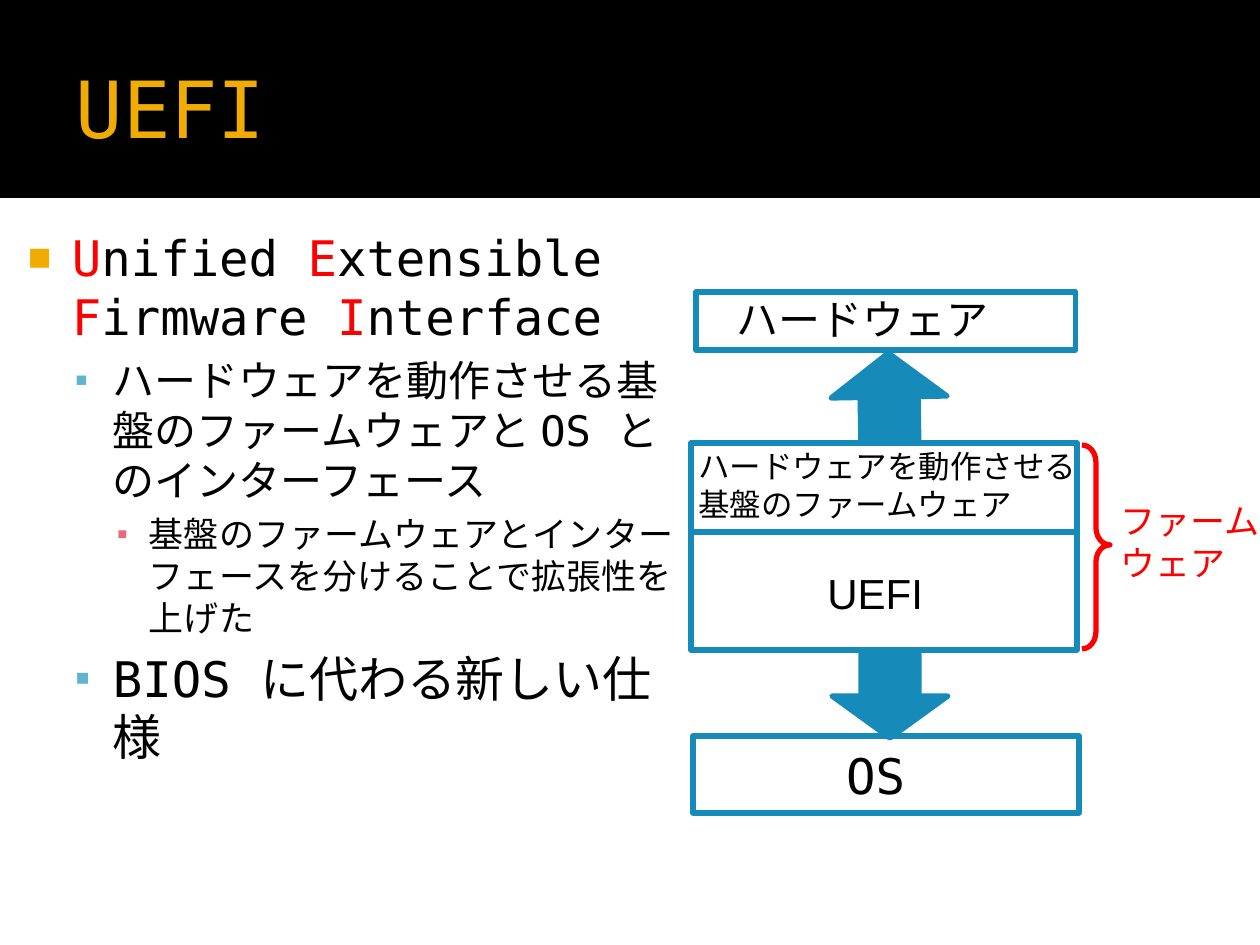
from lxml.etree import SubElement
from pptx import Presentation
from pptx.dml.color import RGBColor
from pptx.enum.shapes import MSO_CONNECTOR as Line, MSO_SHAPE as Kind
from pptx.enum.text import MSO_ANCHOR as Anchor, PP_ALIGN as Align
from pptx.oxml.ns import qn
from pptx.util import Emu, Pt

BLACK = RGBColor(0x00, 0x00, 0x00)
WHITE = RGBColor(0xFF, 0xFF, 0xFF)
RED = RGBColor(0xFF, 0x00, 0x00)
GOLD = RGBColor(0xF0, 0xAC, 0x00)
SKY = RGBColor(0x60, 0xB5, 0xCC)
PINK = RGBColor(0xE6, 0x6C, 0x7D)
BLUE = RGBColor(0x16, 0x8B, 0xBA)
MONO, SANS = "DejaVu Sans Mono", "Arial"
SCALE = 914400 / 126

LEVELS = {
    0: (60, 44, "■", GOLD, 80),
    1: (101, 38, "▪", SKY, 90),
    2: (137, 32, "▪", PINK, 90),
}
POINTS = [
    (0, 28, ["U", "nified ", "E", "xtensible ", "F", "irmware ", "I", "nterface"]),
    (1, 24, ["ハードウェアを動作させる基盤のファームウェアと OS とのインターフェース"]),
    (2, 20, ["基盤のファームウェアとインターフェースを分けることで拡張性を上げた"]),
    (1, 28, ["BIOS に代わる新しい仕様"]),
]


def px(num):
    """Turn pixels into EMU."""
    return Emu(round(num * SCALE))


def style(para, size, color, face):
    """Set the font of a paragraph."""
    font = para.font
    font.size, font.name = Pt(size), face
    font.color.rgb = color


def shape(slide, kind, box, line=None, fill=None):
    """Add a flat preset shape."""
    item = slide.shapes.add_shape(kind, *map(px, box))
    item.shadow.inherit = False
    if fill is None:
        item.fill.background()
    else:
        item.fill.solid()
        item.fill.fore_color.rgb = fill
    if line is None:
        item.line.fill.background()
    else:
        item.line.color.rgb = line
        item.line.width = Pt(3)
    return item


def label(slide, box, rows, size, color=BLACK):
    """Add an unwrapped text box with one paragraph per row."""
    frame = slide.shapes.add_textbox(*map(px, box)).text_frame
    frame.word_wrap = False
    frame.text = "\n".join(rows)
    for para in frame.paragraphs:
        style(para, size, color, SANS)


def bullet(para, level):
    """Give a paragraph the indent and bullet of its level."""
    left, hang, char, color, size = LEVELS[level]
    props = para._p.get_or_add_pPr()
    props.set("marL", str(px(left)))
    props.set("indent", str(px(-hang)))
    SubElement(SubElement(props, qn("a:buClr")), qn("a:srgbClr")).set("val", str(color))
    SubElement(props, qn("a:buSzPct")).set("val", str(size * 1000))
    SubElement(props, qn("a:buFont")).set("typeface", SANS)
    SubElement(props, qn("a:buChar")).set("char", char)


def header(slide, box):
    """Place the black band and the title on it."""
    x, y, w, h = box
    band = shape(slide, Kind.RECTANGLE, box, fill=BLACK)
    title = slide.shapes.title
    title._element.addprevious(band._element)
    title.left, title.top = px(x + 63), px(y + 21)
    title.width, title.height = px(w - 126), px(h - 25)
    frame = title.text_frame
    frame.text = "UEFI"
    frame.vertical_anchor = Anchor.MIDDLE
    frame.margin_right = px(6)
    para = frame.paragraphs[0]
    para.alignment = Align.LEFT
    style(para, 45, GOLD, MONO)


def points(slide, box):
    """Place the bulleted list, with the initials in red."""
    frame = slide.shapes.add_textbox(*map(px, box)).text_frame
    frame.word_wrap = True
    frame.margin_left, frame.margin_top = px(8), px(13)
    for num, (level, size, parts) in enumerate(POINTS):
        para = frame.add_paragraph() if num else frame.paragraphs[0]
        para.level = level
        para.space_before = Pt(size / 5 if level else 0)
        bullet(para, level)
        style(para, size, BLACK, MONO)
        for part in parts:
            run = para.add_run()
            run.text = part
            if len(part) == 1:
                run.font.color.rgb = RED


def layers(slide, box):
    """Place the layers from hardware to OS, with arrows and brace."""
    x, y, w, h = box
    base = shape(slide, Kind.RECTANGLE, (x + 2, y + h - 77, w, 77), BLUE, WHITE)
    frame = base.text_frame
    frame.margin_right = px(33)
    frame.text = "OS"
    para = frame.paragraphs[0]
    para.alignment = Align.CENTER
    style(para, 28, BLACK, MONO)

    brace = shape(slide, Kind.RIGHT_BRACE, (x + 391, y + 153, 28, 204), RED)
    brace.adjustments[0], brace.adjustments[1] = 0.61, 0.49
    shape(slide, Kind.RECTANGLE, (x + 5, y, w - 6, 58), BLUE)
    label(slide, (x + 33, y - 5, 311, 63), ["ハードウェア"], 24)
    shape(slide, Kind.RECTANGLE, (x, y + 151, w, 207), BLUE)
    label(slide, (x + 124, y + 269, 205, 63), ["UEFI"], 24)
    shape(slide, Kind.DOWN_ARROW, (x + 141, y + 362, 116, 84), BLUE, BLUE)
    rise = shape(slide, Kind.DOWN_ARROW, (x + 140, y + 61, 116, 88), BLUE, BLUE)
    rise.rotation = 179
    label(slide, (x + 417, y + 201, 165, 97), ["ファーム", "ウェア"], 20, RED)
    label(slide, (x - 5, y + 149, 403, 88), ["ハードウェアを動作させる", "基盤のファームウェア"], 18)

    ends = x + 2, y + 240, x + w, y + 240
    rule = slide.shapes.add_connector(Line.STRAIGHT, *map(px, ends))
    rule.line.color.rgb = BLUE
    rule.line.width = Pt(3)
    SubElement(rule._element.spPr, qn("a:effectLst"))


def main():
    """Build and save the slide."""
    deck = Presentation()
    deck.slide_width, deck.slide_height = px(1260), px(945)
    slide = deck.slides.add_slide(deck.slide_layouts[5])
    header(slide, (0, 0, 1260, 198))
    points(slide, (4, 215, 703, 730))
    layers(slide, (691, 292, 386, 521))
    deck.save("out.pptx")


if __name__ == "__main__":
    main()
